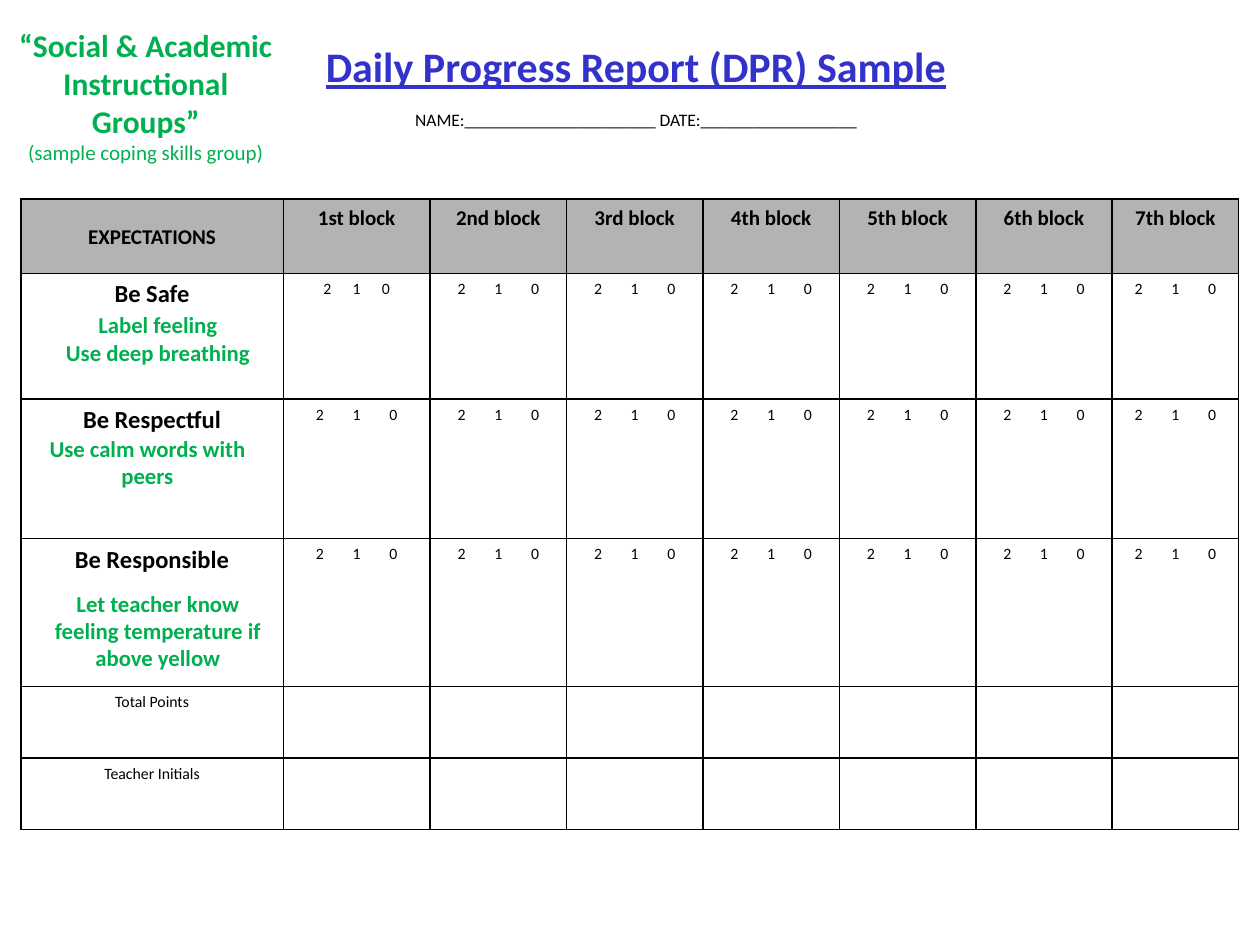
from lxml.etree import SubElement
from pptx import Presentation
from pptx.dml.color import RGBColor
from pptx.enum.text import MSO_ANCHOR, PP_ALIGN
from pptx.oxml import parse_xml
from pptx.oxml.ns import nsdecls, qn
from pptx.util import Cm, Pt

BLACK = RGBColor(0x00, 0x00, 0x00)
BLUE = RGBColor(0x33, 0x33, 0xCC)
GREEN = RGBColor(0x00, 0xB0, 0x50)
GRAY = RGBColor(0xB3, 0xB3, 0xB3)


def write(para, text, size, color=BLACK, bold=False, align=PP_ALIGN.CENTER):
    para.text = text
    para.alignment = align
    for span in para.runs:
        span.font.name = "Calibri"
        span.font.size = Pt(size)
        span.font.bold = bold
        span.font.color.rgb = color


def add_lines(left, top, width, height, lines):
    box = page.shapes.add_textbox(Cm(left), Cm(top), Cm(width), Cm(height))
    frame = box.text_frame
    frame.word_wrap = True
    for index, line in enumerate(lines):
        para = frame.add_paragraph() if index else frame.paragraphs[0]
        write(para, *line)
    return frame


deck = Presentation()
deck.slide_width, deck.slide_height = Cm(25.4), Cm(19.05)
page = deck.slides.add_slide(deck.slide_layouts[6])

heading = add_lines(6.15, 0.64, 13.34, 2.51, [
    ("Daily Progress Report (DPR) Sample", 24, BLUE, True),
    ("NAME:______________________ DATE:__________________", 10),
])
heading.word_wrap = False
heading.margin_top = Cm(0.18)
heading.paragraphs[0].runs[0].font.underline = True
heading.paragraphs[1].space_before = Pt(10)

column_widths = [5.29, 2.96] + [2.75] * 5 + [2.55]
row_heights = [1.5, 2.53, 2.82, 2.98, 1.44, 1.44]
blocks = ["1st", "2nd", "3rd", "4th", "5th", "6th", "7th"]
row_labels = [
    ("EXPECTATIONS", 12, True),
    ("Be Safe", 14, True),
    ("Be Respectful", 14, True),
    ("Be Responsible", 14, True),
    ("Total Points", 9, False),
    ("Teacher Initials", 9, False),
]
score_rows = (1, 2, 3)
digit_width = 0.16

table = page.shapes.add_table(
    len(row_heights), len(column_widths), Cm(0.42), Cm(4.01),
    Cm(sum(column_widths)), Cm(sum(row_heights))).table
table.first_row = False
table.horz_banding = False
for column, width in zip(table.columns, column_widths):
    column.width = Cm(width)
for row, height in zip(table.rows, row_heights):
    row.height = Cm(height)

for r, (label, size, bold) in enumerate(row_labels):
    for c, width in enumerate(column_widths):
        cell = table.cell(r, c)
        para = cell.text_frame.paragraphs[0]
        if r == 0:
            cell.fill.solid()
            cell.fill.fore_color.rgb = GRAY
        else:
            cell.fill.background()
        if c == 0:
            write(para, label, size, BLACK, bold)
        elif r == 0:
            write(para, f"{blocks[c - 1]} block", 12, BLACK, True)
        elif r in score_rows:
            gap = 0.59 if (r, c) == (1, 1) else 0.74
            cell.margin_left = Cm((width - 2 * gap - digit_width) / 2)
            cell.margin_right = 0
            tabs = SubElement(para._p.get_or_add_pPr(), qn("a:tabLst"))
            for stop in (1, 2):
                SubElement(tabs, qn("a:tab"), pos=str(Cm(stop * gap)), algn="l")
            write(para, "2\t1\t0", 9, align=PP_ALIGN.LEFT)
        properties = cell._tc.get_or_add_tcPr()
        for index, side in enumerate("LRTB"):
            properties.insert(index, parse_xml(
                f'<a:ln{side} {nsdecls("a")} w="{Pt(1)}"><a:solidFill>'
                f'<a:srgbClr val="{BLACK}"/></a:solidFill></a:ln{side}>'))
table.cell(0, 0).margin_top = Cm(0.51)
table.cell(0, 0).vertical_anchor = MSO_ANCHOR.TOP

add_lines(-0.02, 0.41, 5.92, 3.07, [
    ("“Social & Academic Instructional Groups”", 18, GREEN, True),
    ("(sample coping skills group)", 12, GREEN),
])

skills = [
    (0.64, 6.15, 1.93, ["Label feeling", "Use deep breathing"]),
    (0.43, 8.64, 1.37, ["Use calm words with peers"]),
    (0.64, 11.76, 1.93, ["Let teacher know feeling temperature if above yellow"]),
]
for left, top, height, lines in skills:
    add_lines(left, top, 5.08, height, [(line, 13, GREEN, True) for line in lines])

deck.save("out.pptx")
